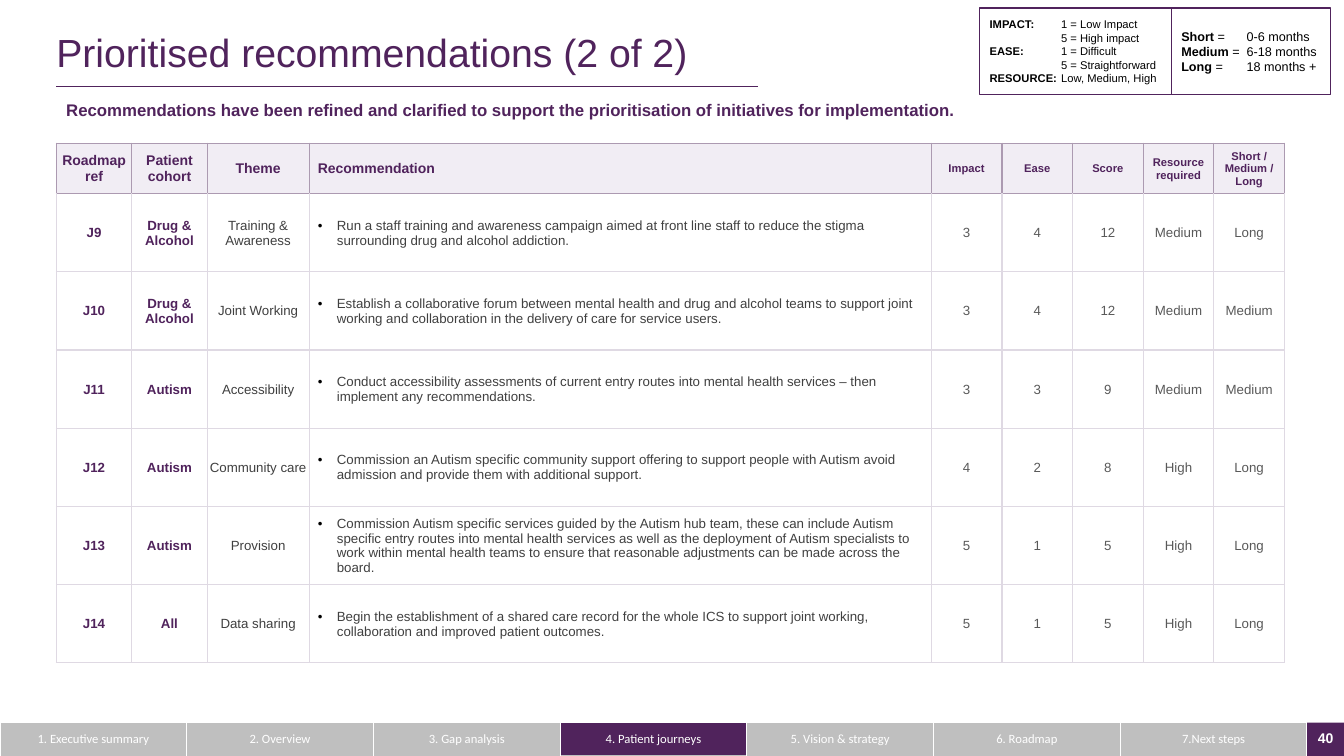
from lxml.etree import SubElement
from pptx import Presentation
from pptx.dml.color import RGBColor
from pptx.enum.shapes import MSO_CONNECTOR as Connector, MSO_SHAPE as Shape
from pptx.enum.text import MSO_ANCHOR as Anchor, MSO_AUTO_SIZE as AutoSize, PP_ALIGN as Align
from pptx.oxml.ns import qn
from pptx.util import Cm, Pt

COLORS = {
    "purple": "50235C", "lilac": "F1EDF4", "header_line": "AC9AB1", "grid": "DFD9E3",
    "dark": "404040", "mid": "595959", "grey": "BFBFBF", "white": "FFFFFF", "black": "000000",
}
LEFT = 1.42
FOOTER_TOP, FOOTER_HEIGHT, NAV_WIDTH = 18.21, 0.84, 32.94
COLUMN_WIDTHS = [1.9, 1.9, 2.57, 15.68] + [1.78] * 5
COLUMN_COLORS = ["purple"] * 2 + ["dark"] * 2 + ["mid"] * 5
RECOMMENDATION = 3
TIGHT = (0.02, 0.02, 0.02, 0)
INDENTED = (0.22, 0.02, 0.02, 0)

HEADERS = ["Roadmap ref", "Patient cohort", "Theme", "Recommendation", "Impact", "Ease",
           "Score", "Resource required", "Short /\nMedium /\nLong"]
ROWS = [
    ["J9", "Drug & Alcohol", "Training & Awareness",
     "Run a staff training and awareness campaign aimed at front line staff to reduce the "
     "stigma surrounding drug and alcohol addiction.", "3", "4", "12", "Medium", "Long"],
    ["J10", "Drug & Alcohol", "Joint Working",
     "Establish a collaborative forum between mental health and drug and alcohol teams to "
     "support joint working and collaboration in the delivery of care for service users.",
     "3", "4", "12", "Medium", "Medium"],
    ["J11", "Autism", "Accessibility",
     "Conduct accessibility assessments of current entry routes into mental health services "
     "– then implement any recommendations.", "3", "3", "9", "Medium", "Medium"],
    ["J12", "Autism", "Community care",
     "Commission an Autism specific community support offering to support people with Autism "
     "avoid admission and provide them with additional support.",
     "4", "2", "8", "High", "Long"],
    ["J13", "Autism", "Provision",
     "Commission Autism specific services guided by the Autism hub team, these can include "
     "Autism specific entry routes into mental health services as well as the deployment of "
     "Autism specialists to work within mental health teams to ensure that reasonable "
     "adjustments can be made across the board.", "5", "1", "5", "High", "Long"],
    ["J14", "All", "Data sharing",
     "Begin the establishment of a shared care record for the whole ICS to support joint "
     "working, collaboration and improved patient outcomes.",
     "5", "1", "5", "High", "Long"],
]
SECTIONS = ["1. Executive summary", "2. Overview", "3. Gap analysis", "4. Patient journeys",
            "5. Vision & strategy", "6. Roadmap", "7.Next steps"]
CURRENT_SECTION = 3
SCORE_KEY = [("IMPACT:", ["\t1 = Low Impact", "\t5 = High impact"]),
             ("EASE:", ["\t1 = Difficult", "\t5 = Straightforward"]),
             ("RESOURCE:", ["\tLow, Medium, High"])]
TERM_KEY = [("Short", [" =\t0-6 months"]), ("Medium", [" =\t6-18 months"]),
            ("Long", [" =\t18 months +"])]


def rgb(name):
    return RGBColor.from_string(COLORS[name])


def add_span(para, text, size, color, bold=False, face="Arial"):
    span = para.add_run()
    span.text = text
    span.font.name, span.font.size, span.font.bold = face, Pt(size), bold
    span.font.color.rgb = rgb(color)


def next_para(frame, index):
    return frame.paragraphs[0] if index == 0 else frame.add_paragraph()


def set_margins(target, margins):
    """Apply left, top, right and bottom margins in centimetres."""
    (target.margin_left, target.margin_top,
     target.margin_right, target.margin_bottom) = map(Cm, margins)


def set_borders(cell, **sides):
    """Draw 1 pt borders; each keyword L, R, T or B names a colour."""
    for side, color in sides.items():
        line = SubElement(cell._tc.get_or_add_tcPr(), qn(f"a:ln{side}"), w=str(Pt(1)))
        fill = SubElement(line, qn("a:solidFill"))
        SubElement(fill, qn("a:srgbClr"), val=COLORS[color])


def add_bullet(para):
    props = para._p.get_or_add_pPr()
    props.set("marL", str(Cm(0.48)))
    props.set("indent", str(-Cm(0.48)))
    color = SubElement(props, qn("a:buClr"))
    SubElement(color, qn("a:srgbClr"), val=COLORS["black"])
    SubElement(props, qn("a:buFont"), typeface="Arial")
    SubElement(props, qn("a:buChar"), char="•")


def add_tab_stop(para, position):
    tabs = SubElement(para._p.get_or_add_pPr(), qn("a:tabLst"))
    SubElement(tabs, qn("a:tab"), pos=str(Cm(position)), algn="l")


def add_plain_table(slide, rows, widths, left, top, heights):
    """Add a table without banding or header style."""
    frame = slide.shapes.add_table(rows, len(widths), Cm(left), Cm(top),
                                   Cm(sum(widths)), Cm(sum(heights)))
    table = frame.table
    table.first_row = table.horz_banding = False
    for column, width in zip(table.columns, widths):
        column.width = Cm(width)
    for row, height in zip(table.rows, heights):
        row.height = Cm(height)
    return table


def fill_cell(cell, text, margins, fill=None, align=Align.CENTER, bullet=False, **style):
    set_margins(cell, margins)
    cell.vertical_anchor = Anchor.MIDDLE
    if fill:
        cell.fill.solid()
        cell.fill.fore_color.rgb = rgb(fill)
    else:
        cell.fill.background()
    for index, line in enumerate(text.split("\n")):
        para = next_para(cell.text_frame, index)
        para.alignment = align
        if bullet:
            add_bullet(para)
        add_span(para, line, **style)


def add_recommendations(slide):
    heights = [1.27] + [1.97] * len(ROWS)
    table = add_plain_table(slide, len(heights), COLUMN_WIDTHS, LEFT, 3.61, heights)
    for column, text in enumerate(HEADERS):
        wide = column == RECOMMENDATION
        cell = table.cell(0, column)
        set_borders(cell, **dict.fromkeys("LRTB", "header_line"))
        fill_cell(cell, text, INDENTED if wide else TIGHT, "lilac",
                  Align.LEFT if wide else Align.CENTER,
                  size=10 if column <= RECOMMENDATION else 8, color="purple", bold=True)
    for row, values in enumerate(ROWS, 1):
        for column, text in enumerate(values):
            wide = column == RECOMMENDATION
            cell = table.cell(row, column)
            set_borders(cell, L="grid", R="grid", T="header_line" if row == 1 else "grid",
                        B="grid")
            fill_cell(cell, text, INDENTED if wide else TIGHT,
                      align=Align.LEFT if wide else Align.CENTER, bullet=wide,
                      size=9.5, color=COLUMN_COLORS[column], bold=column < 2)


def add_navigation(slide):
    widths = [NAV_WIDTH / len(SECTIONS)] * len(SECTIONS)
    table = add_plain_table(slide, 1, widths, 0, FOOTER_TOP, [FOOTER_HEIGHT])
    for column, text in enumerate(SECTIONS):
        cell = table.cell(0, column)
        set_borders(cell, L="white", R="white", B="grey")
        fill_cell(cell, text, (0.33, 0.18, 0.33, 0.18),
                  "purple" if column == CURRENT_SECTION else "grey",
                  size=9, color="white", face="Calibri")


def add_box(slide, left, top, width, height, fill):
    box = slide.shapes.add_shape(Shape.RECTANGLE, Cm(left), Cm(top), Cm(width), Cm(height))
    box.shadow.inherit = False
    box.fill.solid()
    box.fill.fore_color.rgb = rgb(fill)
    box.line.color.rgb = rgb("purple")
    box.line.width = Pt(1)
    box.text_frame.vertical_anchor = Anchor.MIDDLE
    box.text_frame.word_wrap = True
    return box


def add_key(slide, left, width, entries, size, tab):
    """Add a key box with bold terms and meanings lined up at a tab stop."""
    box = add_box(slide, left, 0.2, width, 2.18, "white")
    for index, (term, meanings) in enumerate(entries):
        para = next_para(box.text_frame, index)
        para.alignment = Align.LEFT
        add_tab_stop(para, tab)
        add_span(para, term, size, "black", bold=True)
        for number, meaning in enumerate(meanings):
            if number:
                para.add_line_break()
            add_span(para, meaning, size, "black")


def add_page_number(slide, number):
    box = add_box(slide, NAV_WIDTH, FOOTER_TOP, 0.93, FOOTER_HEIGHT, "purple")
    box.line.fill.background()
    set_margins(box.text_frame, (0, 0, 0, 0.05))
    para = box.text_frame.paragraphs[0]
    para.alignment = Align.CENTER
    add_span(para, number, 10, "white", bold=True)


def add_heading(slide, text, subtitle):
    title = slide.shapes.title
    title.left, title.top, title.width, title.height = Cm(LEFT), Cm(0.84), Cm(26.1), Cm(1.2)
    frame = title.text_frame
    frame.auto_size, frame.vertical_anchor = AutoSize.NONE, Anchor.TOP
    set_margins(frame, (0, 0, 0, 0))
    para = frame.paragraphs[0]
    para.alignment, para.line_spacing = Align.LEFT, 0.9
    add_span(para, text, 28, "purple")

    rule = slide.shapes.add_connector(Connector.STRAIGHT, Cm(LEFT), Cm(2.18), Cm(19.1), Cm(2.18))
    rule.line.color.rgb = rgb("purple")
    rule.line.width = Pt(0.5)
    SubElement(rule._element.spPr, qn("a:effectLst"))

    box = slide.shapes.add_textbox(Cm(LEFT), Cm(2.39), Cm(31.52), Cm(1.45))
    box.text_frame.word_wrap = True
    add_span(box.text_frame.paragraphs[0], subtitle, 12, "purple", bold=True)


def main():
    deck = Presentation()
    deck.slide_width, deck.slide_height = Cm(33.87), Cm(19.05)
    slide = deck.slides.add_slide(deck.slide_layouts[5])
    add_page_number(slide, "40")
    add_heading(slide, "Prioritised recommendations (2 of 2)",
                "Recommendations have been refined and clarified to support the "
                "prioritisation of initiatives for implementation.")
    add_recommendations(slide)
    add_navigation(slide)
    add_key(slide, 24.69, 4.85, SCORE_KEY, 8, 1.8)
    add_key(slide, 29.52, 4.01, TERM_KEY, 9, 1.65)
    deck.save("out.pptx")


if __name__ == "__main__":
    main()
